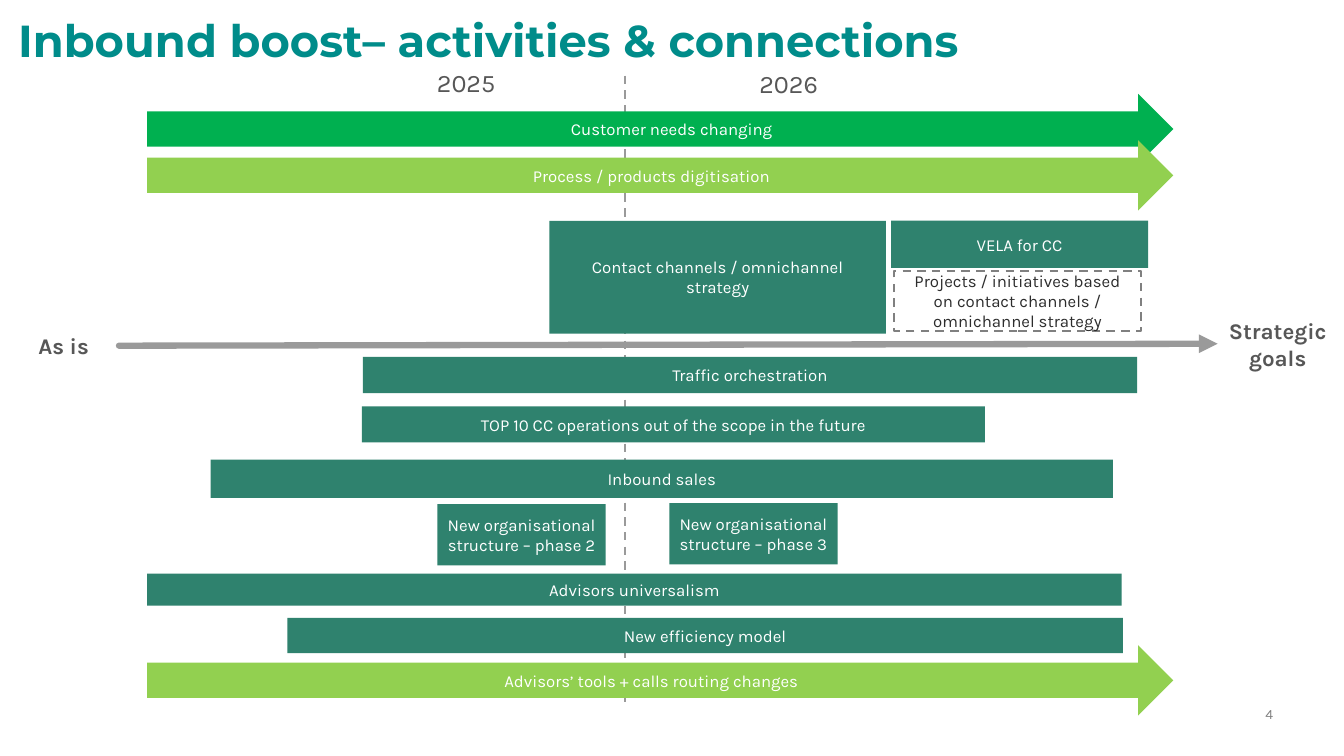
from collections import namedtuple

from lxml import etree
from pptx import Presentation
from pptx import util as u
from pptx.dml.color import RGBColor
from pptx.enum import dml, shapes, text
from pptx.oxml.ns import qn

Box = namedtuple("Box", "left top width height")

TEAL = "2F826E"
GREEN = "00B050"
LIME = "92D050"
LINE_GRAY = "9A9A9A"
TEXT_GRAY = "575757"
MID_GRAY = "808080"
WHITE = "FFFFFF"


def color(value):
    return RGBColor.from_string(value)


def inside(region, left, top, width, height):
    return Box(region.left + left, region.top + top, width, height)


def lengths(box):
    return [u.Pt(value) for value in box]


def write(shape, words, size, text_color, font="Karla", bold=False,
          align=text.PP_ALIGN.CENTER, anchor=text.MSO_ANCHOR.MIDDLE, inset=None):
    frame = shape.text_frame
    frame.text = words
    frame.word_wrap = True
    frame.vertical_anchor = anchor
    if inset is not None:
        frame.margin_left = frame.margin_right = u.Pt(inset)
        frame.margin_top = frame.margin_bottom = u.Pt(inset)
    paragraph = frame.paragraphs[0]
    paragraph.alignment = align
    run_font = paragraph.runs[0].font
    run_font.name = font
    run_font.size = u.Pt(size)
    run_font.bold = bold
    run_font.color.rgb = color(text_color)
    return paragraph


def add_label(slide, box, words, size, text_color, **style):
    label = slide.shapes.add_textbox(*lengths(box))
    write(label, words, size, text_color, **style)
    return label


def add_block(slide, box, words, fill=TEAL, kind=shapes.MSO_SHAPE.RECTANGLE):
    block = slide.shapes.add_shape(kind, *lengths(box))
    block.shadow.inherit = False
    block.fill.solid()
    block.fill.fore_color.rgb = color(fill)
    block.line.fill.background()
    write(block, words, 12, WHITE)
    return block


def add_line(slide, start, end, width):
    line = slide.shapes.add_connector(
        shapes.MSO_CONNECTOR.STRAIGHT, *lengths(start + end))
    line.line.color.rgb = color(LINE_GRAY)
    line.line.width = u.Pt(width)
    etree.SubElement(line._element.spPr, qn("a:effectLst"))
    return line


def add_year_divider(slide, box):
    divider = add_line(slide, (box.left, box.top),
                       (box.left, box.top + box.height), 1.5)
    divider.line.dash_style = dml.MSO_LINE.DASH


def add_header(slide, box):
    title = add_label(slide, inside(box, 0, 0, box.width, 34.6),
                      "Inbound boost– activities & connections", 32, "008C8A",
                      font="Montserrat", bold=True, align=text.PP_ALIGN.LEFT,
                      anchor=text.MSO_ANCHOR.TOP, inset=0)
    title.text_frame.paragraphs[0].line_spacing = 0.9
    for year, left, top in (("2025", 256.3, 30.2), ("2026", 486.7, 30.9)):
        label = add_label(slide, inside(box, left, top, 127.4, 33.1),
                          year, 18, TEXT_GRAY, inset=2.9)
        paragraph = label.text_frame.paragraphs[0]
        paragraph.line_spacing = 0.9
        paragraph.space_after = u.Pt(6)


def add_timeline(slide, box):
    start = add_label(slide, inside(box, 0, 1.4, 79.2, 67.7),
                      "As is", 16, TEXT_GRAY, bold=True)
    goal = add_label(slide, inside(box, box.width - 85.7, 0, 85.7, 67.7),
                     "Strategic goals", 16, TEXT_GRAY, bold=True)
    axis = add_line(slide, (85, 247), (869.8, 245), 4.5)
    axis.begin_connect(start, 3)
    axis.end_connect(goal, 1)
    outline = axis.line._get_or_add_ln()
    outline.set("cap", "rnd")
    etree.SubElement(outline, qn("a:tailEnd"), type="triangle")


def add_trends(slide, box):
    trends = (
        ("Customer needs changing", 0, GREEN),
        ("Process / products digitisation", 33.1, LIME),
        ("Advisors’ tools + calls routing changes", 393.8, LIME),
    )
    arrows = [
        add_block(slide, inside(box, 0, top, box.width, 50.4), words, fill,
                  shapes.MSO_SHAPE.RIGHT_ARROW)
        for words, top, fill in trends
    ]
    arrows[0].text_frame.margin_left = u.Pt(36)


def add_strategy(slide, box):
    add_block(slide, inside(box, 0, 0, 240.5, box.height),
              "Contact channels / omnichannel strategy")
    add_block(slide, inside(box, 244.1, 0, 183.6, 33.8), "VELA for CC")
    projects = add_block(
        slide, inside(box, 246.2, 36, 176.4, 42.5),
        "Projects / initiatives based on contact channels / omnichannel strategy")
    projects.fill.background()
    projects.line.color.rgb = color(MID_GRAY)
    projects.line.width = u.Pt(1.5)
    projects.line.dash_style = dml.MSO_LINE.DASH
    projects.text_frame.paragraphs[0].runs[0].font.color.rgb = color("2C2C2C")


def add_initiatives(slide, box):
    initiatives = (
        ("Traffic orchestration", 154.1, 0, 553, 25.9),
        ("TOP 10 CC operations out of the scope in the future",
         153.4, 35.3, 445, 25.9),
        ("Inbound sales", 45.4, 73.4, 644.4, 27.4),
        ("New organisational structure – phase 2", 207.4, 105.1, 120.2, 43.9),
        ("New organisational structure – phase 3", 373, 104.4, 120.2, 43.9),
        ("Advisors universalism", 0, 154.8, 696.2, 23),
        ("New efficiency model", 100.1, 186.5, 596.9, 25.2),
    )
    for words, *place in initiatives:
        add_block(slide, inside(box, *place), words)


def main():
    presentation = Presentation()
    presentation.slide_width = u.Pt(960)
    presentation.slide_height = u.Pt(540)
    slide = presentation.slides.add_slide(presentation.slide_layouts[6])

    add_year_divider(slide, Box(446.4, 54, 0, 447.1))
    add_timeline(slide, Box(5.8, 211.7, 949.7, 69.1))
    add_trends(slide, Box(105.1, 67, 733, 444.2))
    add_strategy(slide, Box(392.4, 157.7, 427.7, 80.6))
    add_initiatives(slide, Box(105.1, 254.9, 707.1, 211.7))
    add_header(slide, Box(13, 13.7, 780.5, 64))
    add_label(slide, Box(879.1, 504, 30.2, 12.2), "4", 10, MID_GRAY,
              align=text.PP_ALIGN.RIGHT, anchor=text.MSO_ANCHOR.BOTTOM, inset=0)

    presentation.save("out.pptx")


if __name__ == "__main__":
    main()
